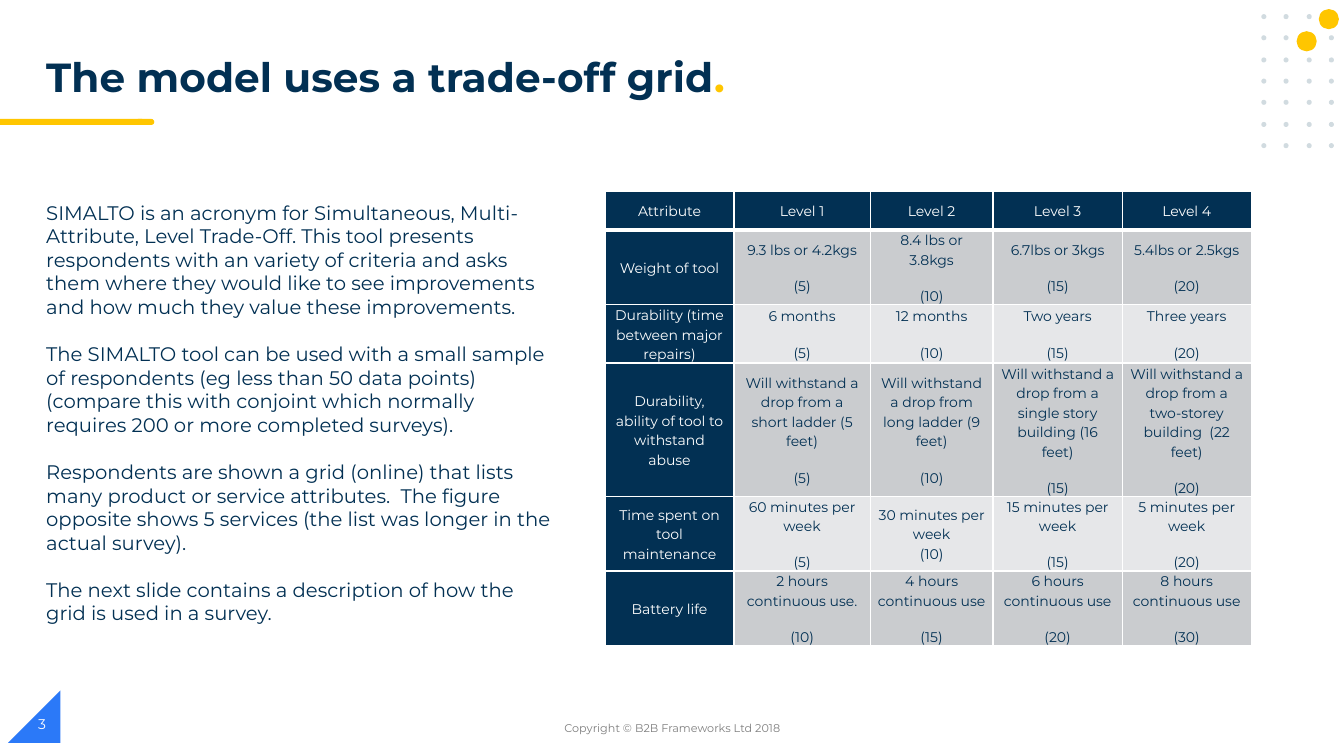
from dataclasses import dataclass
from itertools import product

from lxml.etree import SubElement
from pptx import Presentation
from pptx.dml.color import RGBColor
from pptx.enum.shapes import MSO_SHAPE
from pptx.enum.text import MSO_ANCHOR, PP_ALIGN
from pptx.oxml.ns import qn
from pptx.util import Pt

PX = 9144  # EMU in one px, 100 px to the inch
FONT = "Montserrat"
COLORS = {
    "navy": "023053", "yellow": "FFC600", "blue": "2B79F8", "dot": "D1DBE0",
    "white": "FFFFFF", "dark_band": "CACCCF", "light_band": "E6E7E9", "footer": "7F7F7F",
}


@dataclass
class Level:
    feature: str
    score: int
    gap: int = 12


BODY = [
    "SIMALTO is an acronym for Simultaneous, Multi-Attribute, Level Trade-Off. This tool presents "
    "respondents with an variety of criteria and asks them where they would like to see improvements "
    "and how much they value these improvements.",
    "The SIMALTO tool can be used with a small sample of respondents (eg less than 50 data points) "
    "(compare this with conjoint which normally requires 200 or more completed surveys).",
    "Respondents are shown a grid (online) that lists many product or service attributes.  The figure "
    "opposite shows 5 services (the list was longer in the actual survey).",
    "The next slide contains a description of how the grid is used in a survey.",
]
HEADINGS = ["Attribute", "Level 1", "Level 2", "Level 3", "Level 4"]
ATTRIBUTES = {
    "Weight of tool": [
        Level("9.3 lbs or 4.2kgs", 5), Level("8.4 lbs or 3.8kgs", 10),
        Level("6.7lbs or 3kgs", 15), Level("5.4lbs or 2.5kgs", 20)],
    "Durability (time between major repairs)": [
        Level("6 months", 5), Level("12 months", 10),
        Level("Two years", 15), Level("Three years", 20)],
    "Durability, ability of tool to withstand abuse": [
        Level("Will withstand a drop from a short ladder (5 feet)", 5),
        Level("Will withstand a drop from long ladder (9 feet)", 10),
        Level("Will withstand a drop from a single story building (16 feet)", 15),
        Level("Will withstand a drop from a two-storey building  (22 feet)", 20)],
    "Time spent on tool maintenance": [
        Level("60 minutes per week", 5), Level("30 minutes per week", 10, gap=0),
        Level("15 minutes per week", 15), Level("5 minutes per week", 20)],
    "Battery life": [
        Level("2 hours continuous use.", 10), Level("4 hours continuous use", 15),
        Level("6 hours continuous use", 20), Level("8 hours continuous use", 30)],
}
COLUMN_WIDTHS = [128, 135, 122, 128, 128]
ROW_HEIGHTS = [38, 73, 58, 132, 74, 73]


def color(name):
    return RGBColor.from_string(COLORS[name])


def emu(box):
    return [length * PX for length in box]


def style(span, size, color_name, bold=False):
    span.font.name = FONT
    span.font.size = Pt(size)
    span.font.bold = bold
    span.font.color.rgb = color(color_name)


def add_filled(page, preset, box, color_name):
    shape = page.shapes.add_shape(preset, *emu(box))
    shape.shadow.inherit = False
    shape.fill.solid()
    shape.fill.fore_color.rgb = color(color_name)
    shape.line.fill.background()
    return shape


def add_text(page, box, texts, size, color_name, align=PP_ALIGN.LEFT,
             anchor=MSO_ANCHOR.TOP, gap=0):
    frame = page.shapes.add_textbox(*emu(box)).text_frame
    frame.word_wrap = True
    frame.vertical_anchor = anchor
    frame.text = "\n".join(texts)
    for index, para in enumerate(frame.paragraphs):
        para.alignment = align
        if index:
            para.space_before = Pt(gap)
        for span in para.runs:
            style(span, size, color_name)
    return frame


def add_dot_grid(page, box):
    left, top, width, height = box
    columns, rows, dot, circle = 4, 7, 5, 20
    for row, column in product(range(rows), range(columns)):
        x = left + round(column * (width - dot) / (columns - 1))
        y = top + round(row * (height - dot) / (rows - 1))
        add_filled(page, MSO_SHAPE.OVAL, (x, y, dot, dot), "dot")
    for x, y in [(57, -5), (35, 17)]:
        add_filled(page, MSO_SHAPE.OVAL, (left + x, top + y, circle, circle), "yellow")


def add_title(page, box):
    left, top, width, height = box
    add_filled(page, MSO_SHAPE.FLOWCHART_TERMINATOR, (134, top + 66, 19, 6), "yellow")
    add_filled(page, MSO_SHAPE.RECTANGLE, (0, top + 66, 141, 6), "yellow")
    para = add_text(page, box, ["The model uses a trade-off grid"], 29, "navy").paragraphs[0]
    para.line_spacing = 0.9
    para.runs[0].font.bold = True
    stop = para.add_run()
    stop.text = "."
    style(stop, 29, "yellow", bold=True)


def add_borders(cell, bottom_width, top_width):
    """Draw white cell edges; they must precede the fill in the cell properties."""
    properties = cell._tc.get_or_add_tcPr()
    widths = {"a:lnL": 1, "a:lnR": 1, "a:lnT": top_width, "a:lnB": bottom_width}
    for tag, width in widths.items():
        line = SubElement(properties, qn(tag), w=str(Pt(width)))
        fill = SubElement(line, qn("a:solidFill"))
        SubElement(fill, qn("a:srgbClr"), val=COLORS["white"])


def fill_cell(cell, texts, text_color, fill_color, gap=0):
    cell.margin_left = cell.margin_right = 7 * PX
    cell.margin_top = cell.margin_bottom = 0
    cell.vertical_anchor = MSO_ANCHOR.MIDDLE
    cell.fill.solid()
    cell.fill.fore_color.rgb = color(fill_color)
    cell.text_frame.text = "\n".join(texts)
    for index, para in enumerate(cell.text_frame.paragraphs):
        para.alignment = PP_ALIGN.CENTER
        para.line_spacing = 1.15
        if index:
            para.space_before = Pt(gap)
        for span in para.runs:
            style(span, 10, text_color)


def add_trade_off_grid(page, box):
    table = page.shapes.add_table(len(ROW_HEIGHTS), len(HEADINGS), *emu(box)).table
    for column, width in zip(table.columns, COLUMN_WIDTHS):
        column.width = width * PX
    for row, height in zip(table.rows, ROW_HEIGHTS):
        row.height = height * PX
    for row, column in product(range(len(ROW_HEIGHTS)), range(len(HEADINGS))):
        add_borders(table.cell(row, column), 3 if row == 0 else 1, 3 if row == 1 else 1)
    for column, heading in enumerate(HEADINGS):
        fill_cell(table.cell(0, column), [heading], "white", "navy")
    for row, (attribute, levels) in enumerate(ATTRIBUTES.items(), 1):
        fill_cell(table.cell(row, 0), [attribute], "white", "navy")
        band = "dark_band" if row % 2 else "light_band"
        for column, level in enumerate(levels, 1):
            fill_cell(table.cell(row, column), [level.feature, f"({level.score})"],
                      "navy", band, level.gap)


def add_footer(page, box):
    left, top, width, height = box
    corner = add_filled(page, MSO_SHAPE.RIGHT_TRIANGLE, (left + 8, top, 52, 52), "blue")
    corner._element.spPr.find(qn("a:xfrm")).set("flipH", "1")
    add_text(page, (left + 442, top + 17, 450, 40), ["Copyright © B2B Frameworks Ltd 2018"],
             8, "footer", PP_ALIGN.CENTER, MSO_ANCHOR.MIDDLE)
    add_text(page, (left + 28, top + 13, 300, 40), ["3"], 10, "white", anchor=MSO_ANCHOR.MIDDLE)


def main():
    deck = Presentation()
    deck.slide_width, deck.slide_height = emu((1333, 750))
    page = deck.slides.add_slide(deck.slide_layouts[6])
    add_dot_grid(page, (1251, 14, 72, 133))
    add_title(page, (36, 52, 1101, 60))
    add_text(page, (36, 194, 528, 434), BODY, 14, "navy", gap=17)
    add_trade_off_grid(page, (600, 190, sum(COLUMN_WIDTHS), sum(ROW_HEIGHTS)))
    add_footer(page, (0, 685, 1333, 65))
    deck.save("out.pptx")


if __name__ == "__main__":
    main()
